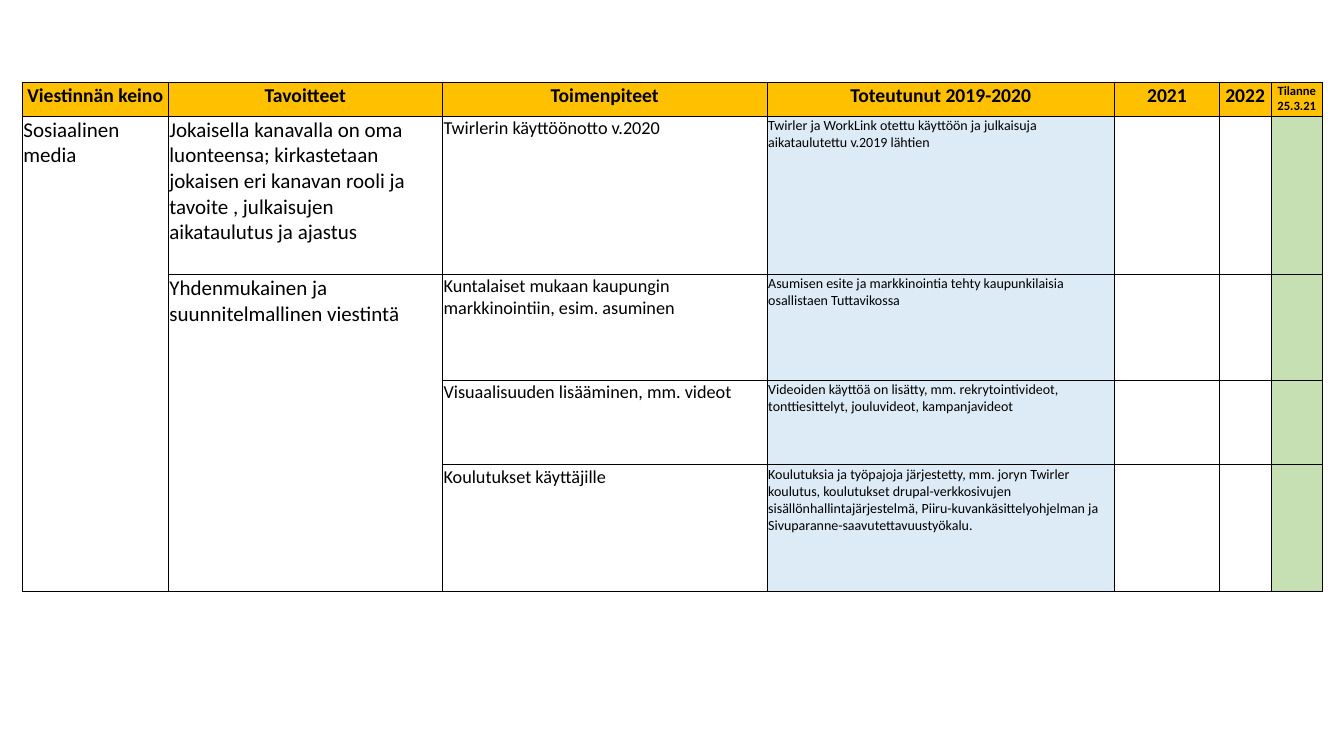
"""Build a slide with the social media section of a communication plan table."""
from lxml import etree
from pptx import Presentation
from pptx.dml.color import RGBColor
from pptx.enum.text import PP_ALIGN
from pptx.oxml.ns import qn
from pptx.util import Cm, Pt

CENTER, LEFT = PP_ALIGN.CENTER, PP_ALIGN.LEFT
BLACK, WHITE, GOLD, BLUE, GREEN = "000000", "FFFFFF", "FFC000", "DDEBF7", "C6E0B4"
CONTINUED = None

ROWS = [
    ("Viestinnän keino", "Tavoitteet", "Toimenpiteet", "Toteutunut 2019-2020",
     "2021", "2022", "Tilanne 25.3.21"),
    ("Sosiaalinen media",
     "Jokaisella kanavalla on oma luonteensa; kirkastetaan jokaisen eri kanavan rooli ja "
     "tavoite , julkaisujen aikataulutus ja ajastus",
     "Twirlerin käyttöönotto v.2020",
     "Twirler ja WorkLink otettu käyttöön ja julkaisuja aikataulutettu v.2019 lähtien",
     "", "", ""),
    (CONTINUED, "Yhdenmukainen ja suunnitelmallinen viestintä",
     "Kuntalaiset mukaan kaupungin markkinointiin, esim. asuminen",
     "Asumisen esite ja markkinointia tehty kaupunkilaisia osallistaen Tuttavikossa",
     "", "", ""),
    (CONTINUED, CONTINUED, "Visuaalisuuden lisääminen, mm. videot",
     "Videoiden käyttöä on lisätty, mm. rekrytointivideot, tonttiesittelyt, jouluvideot, "
     "kampanjavideot",
     "", "", ""),
    (CONTINUED, CONTINUED, "Koulutukset käyttäjille",
     "Koulutuksia ja työpajoja järjestetty, mm. joryn Twirler koulutus, koulutukset "
     "drupal-verkkosivujen sisällönhallintajärjestelmä, Piiru-kuvankäsittelyohjelman ja "
     "Sivuparanne-saavutettavuustyökalu.",
     "", "", ""),
]
COLUMN_WIDTHS = [3.68, 6.91, 8.18, 8.76, 2.64, 1.3, 1.3]
ROW_HEIGHTS = [0.84, 3.99, 2.67, 2.13, 3.2]
HEADER_SIZES = [14, 14, 14, 14, 14, 14, 9]
BODY_SIZES = [15, 15, 13, 10, 10, 10, 10]
BODY_FILLS = [WHITE, WHITE, WHITE, BLUE, WHITE, WHITE, GREEN]
TABLE_LEFT, TABLE_TOP = 0.56, 2.08
INSET = 0.03


def color(value):
    return RGBColor.from_string(value)


def set_borders(cell, hidden_sides):
    properties = cell._tc.get_or_add_tcPr()
    for position, side in enumerate("LRTB"):
        line = etree.Element(qn(f"a:ln{side}"), w=str(Pt(0.5)))
        if side in hidden_sides:
            etree.SubElement(line, qn("a:noFill"))
        else:
            fill = etree.SubElement(line, qn("a:solidFill"))
            etree.SubElement(fill, qn("a:srgbClr"), val=BLACK)
        properties.insert(position, line)


def format_cell(cell, text, fill, size, is_header):
    cell.margin_left = cell.margin_right = cell.margin_top = Cm(INSET)
    cell.margin_bottom = 0
    cell.fill.solid()
    cell.fill.fore_color.rgb = color(fill)
    cell.text = text or ""
    paragraph = cell.text_frame.paragraphs[0]
    paragraph.alignment = CENTER if is_header else LEFT
    font = paragraph.font
    font.name, font.size, font.bold = "Calibri", Pt(size), is_header
    font.color.rgb = color(BLACK)


def add_plan_table(slide):
    frame = slide.shapes.add_table(
        len(ROWS), len(COLUMN_WIDTHS), Cm(TABLE_LEFT), Cm(TABLE_TOP),
        Cm(sum(COLUMN_WIDTHS)), Cm(sum(ROW_HEIGHTS)))
    table = frame.table
    table.first_row = table.horz_banding = False
    for column, width in zip(table.columns, COLUMN_WIDTHS):
        column.width = Cm(width)
    for row, height in zip(table.rows, ROW_HEIGHTS):
        row.height = Cm(height)
    for r, texts in enumerate(ROWS):
        is_header = r == 0
        sizes = HEADER_SIZES if is_header else BODY_SIZES
        for c, text in enumerate(texts):
            cell = table.cell(r, c)
            fill = GOLD if is_header else BODY_FILLS[c]
            format_cell(cell, text, fill, sizes[c], is_header)
            hidden_sides = "T" if text is CONTINUED else ""
            if r + 1 < len(ROWS) and ROWS[r + 1][c] is CONTINUED:
                hidden_sides += "B"
            set_borders(cell, hidden_sides)


def main():
    presentation = Presentation()
    presentation.slide_width, presentation.slide_height = Cm(33.87), Cm(19.05)
    slide = presentation.slides.add_slide(presentation.slide_layouts[6])
    add_plan_table(slide)
    presentation.save("out.pptx")


if __name__ == "__main__":
    main()
